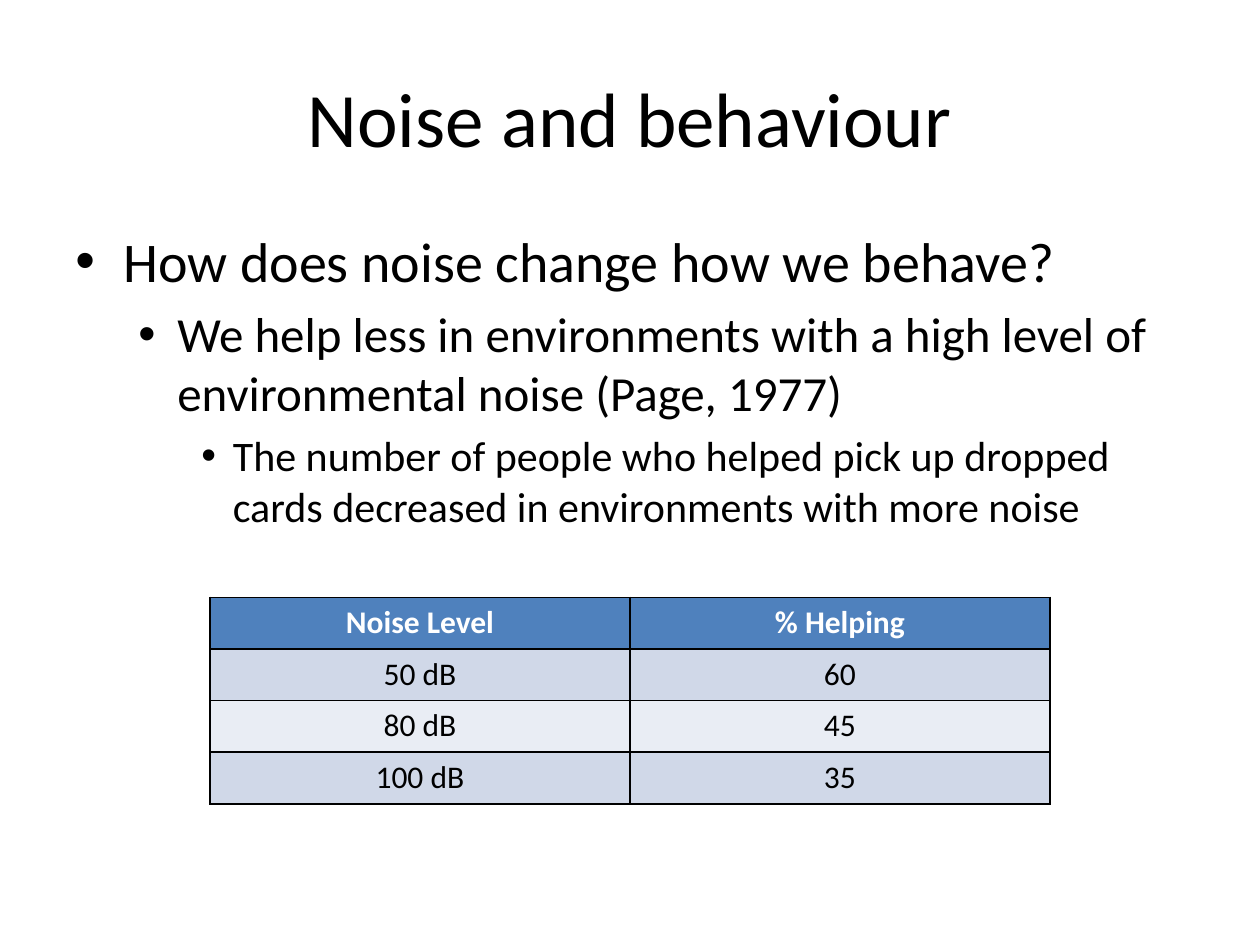
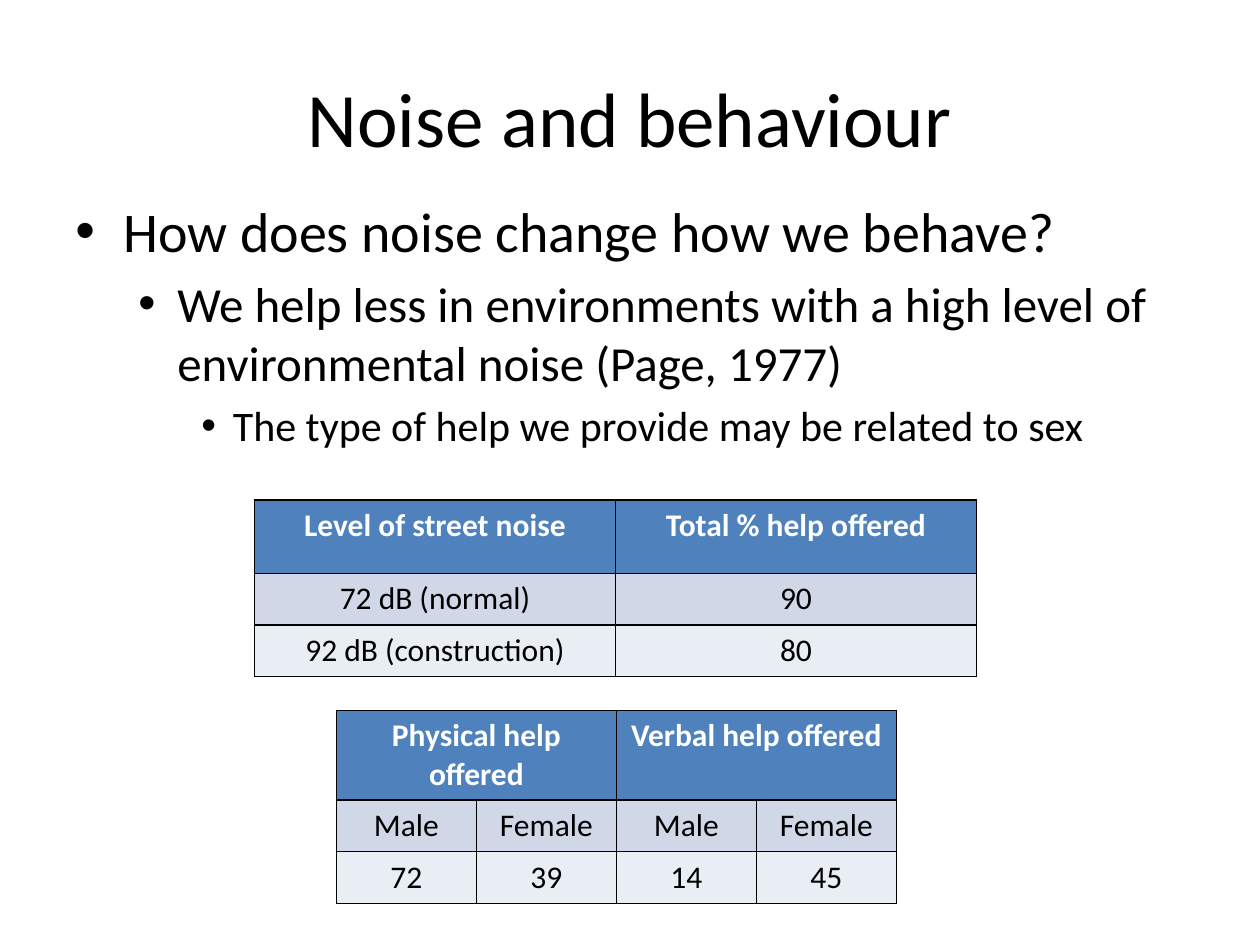
from lxml import etree
from pptx import Presentation, util as u
from pptx.dml.color import RGBColor
from pptx.enum import text
from pptx.oxml.ns import qn

WIDTH, HEIGHT = 10, 7.5
FONT = "Calibri"
BLACK, WHITE = "000000", "FFFFFF"
HEADER_FILL = "4F81BD"
BAND_FILLS = ("D0D8E8", "E9EDF4")
MARGIN = 0.05 * WIDTH
CONTENT_WIDTH = WIDTH - 2 * MARGIN
ROW_HEIGHT = 0.41
BORDER_WIDTH = 1

# Size in points, left indent and hanging indent in inches, per outline level
OUTLINE_LEVELS = ((32, 0.38, 0.38), (28, 0.81, 0.31), (24, 1.25, 0.25))

TITLE = "Noise and behaviour"
QUESTION = "How does noise change how we behave?"
FINDING = ("We help less in environments with a high level of "
           "environmental noise (Page, 1977)")


def rgb(code):
    return RGBColor.from_string(code)


def write(paragraph, words, size, color=BLACK, bold=False):
    run = paragraph.add_run()
    run.text = words
    for name, value in dict(name=FONT, size=u.Pt(size), bold=bold).items():
        setattr(run.font, name, value)
    run.font.color.rgb = rgb(color)


def add_text_frame(slide, top, height, anchor):
    box = slide.shapes.add_textbox(*map(u.Inches, (MARGIN, top, CONTENT_WIDTH, height)))
    frame = box.text_frame
    for name, value in dict(word_wrap=True, vertical_anchor=anchor).items():
        setattr(frame, name, value)
    return frame


def add_title(slide, words):
    frame = add_text_frame(slide, 0.04 * HEIGHT, HEIGHT / 6, text.MSO_ANCHOR.MIDDLE)
    heading = frame.paragraphs[0]
    heading.alignment = text.PP_ALIGN.CENTER
    write(heading, words, 44)


def add_bullet(paragraph, indent, hanging):
    props = paragraph._p.get_or_add_pPr()
    props.set("marL", str(u.Inches(indent)))
    props.set("indent", str(-u.Inches(hanging)))
    etree.SubElement(props, qn("a:buFont"), typeface="Arial")
    etree.SubElement(props, qn("a:buChar"), char="•")


def add_outline(slide, top, points):
    """Write the points one level deeper each."""
    frame = add_text_frame(slide, top, 0.66 * HEIGHT, text.MSO_ANCHOR.TOP)
    for level, (point, (size, indent, hanging)) in enumerate(zip(points, OUTLINE_LEVELS)):
        paragraph = frame.add_paragraph() if level else frame.paragraphs[0]
        paragraph.level = level
        paragraph.space_before = u.Pt(0.2 * size)
        add_bullet(paragraph, indent, hanging)
        write(paragraph, point, size)


def add_borders(cell):
    props = cell._tc.get_or_add_tcPr()
    for position, side in enumerate(("lnL", "lnR", "lnT", "lnB")):
        line = etree.Element(qn(f"a:{side}"), w=str(u.Pt(BORDER_WIDTH)))
        fill = etree.SubElement(line, qn("a:solidFill"))
        etree.SubElement(fill, qn("a:srgbClr"), val=BLACK)
        props.insert(position, line)


def add_data_table(slide, left, top, width, rows, header_height=ROW_HEIGHT):
    """Draw a banded table; None in a row extends the cell to its left."""
    columns = len(rows[0])
    height = header_height + ROW_HEIGHT * (len(rows) - 1)
    table = slide.shapes.add_table(
        len(rows), columns, *map(u.Inches, (left, top, width, height))).table
    for column in table.columns:
        column.width = u.Inches(width / columns)
    for r, values in enumerate(rows):
        is_header = r == 0
        table.rows[r].height = u.Inches(header_height if is_header else ROW_HEIGHT)
        for c, value in enumerate(values):
            cell = table.cell(r, c)
            cell.fill.solid()
            cell.fill.fore_color.rgb = rgb(
                HEADER_FILL if is_header else BAND_FILLS[(r - 1) % 2])
            add_borders(cell)
            if value is None:
                table.cell(r, c - 1).merge(cell)
                continue
            entry = cell.text_frame.paragraphs[0]
            entry.alignment = text.PP_ALIGN.CENTER
            write(entry, value, 18, WHITE if is_header else BLACK, is_header)


def add_topic_slide(deck, outline_top, detail):
    slide = deck.slides.add_slide(deck.slide_layouts[6])
    add_title(slide, TITLE)
    add_outline(slide, outline_top, (QUESTION, FINDING, detail))
    return slide


def main():
    deck = Presentation()
    deck.slide_width, deck.slide_height = u.Inches(WIDTH), u.Inches(HEIGHT)

    card_study = add_topic_slide(
        deck, 1.75,
        "The number of people who helped pick up dropped cards "
        "decreased in environments with more noise")
    add_data_table(card_study, WIDTH / 6, 4.74, WIDTH * 2 / 3, (
        ("Noise Level", "% Helping"),
        ("50 dB", "60"),
        ("80 dB", "45"),
        ("100 dB", "35")))

    street_study = add_topic_slide(
        deck, 1.51, "The type of help we provide may be related to sex")
    add_data_table(street_study, 2.67, 5.64, WIDTH * 4 / 9, (
        ("Physical help offered", None, "Verbal help offered", None),
        ("Male", "Female", "Male", "Female"),
        ("72", "39", "14", "45")), header_height=0.71)
    add_data_table(street_study, 2.02, 3.97, 5.73, (
        ("Level of street noise", "Total % help offered"),
        ("72 dB (normal)", "90"),
        ("92 dB (construction)", "80")), header_height=0.58)

    deck.save("out.pptx")


if __name__ == "__main__":
    main()
